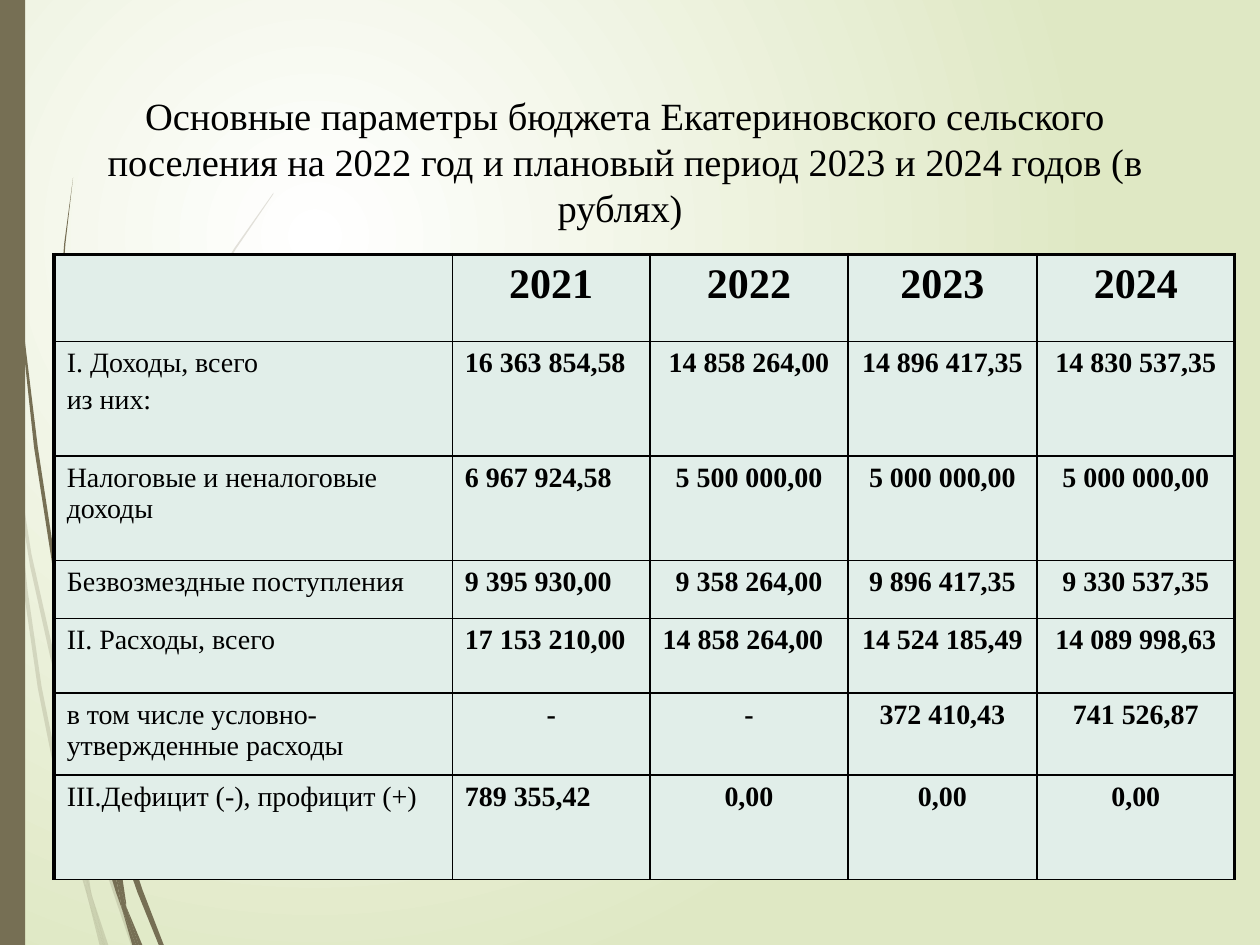
from lxml import etree
from pptx import Presentation
from pptx.dml.color import RGBColor
from pptx.enum.shapes import MSO_SHAPE
from pptx.enum.text import PP_ALIGN, MSO_ANCHOR
from pptx.oxml import parse_xml
from pptx.oxml.ns import qn, nsdecls
from pptx.util import Inches, Pt

FONT = "Times New Roman"
BLACK = RGBColor(0x00, 0x00, 0x00)
BROWN = RGBColor(0x76, 0x6F, 0x54)
CELL_FILL = RGBColor(0xE1, 0xEE, 0xE9)
GLOW, MEADOW = RGBColor(0xFF, 0xFF, 0xFF), RGBColor(0xDF, 0xE8, 0xC4)

TITLE = ("Основные параметры бюджета Екатериновского сельского поселения "
         "на 2022 год и плановый период 2023 и 2024 годов (в рублях) ")
BUDGET = [
    ("", "2021", "2022", "2023", "2024"),
    ("I. Доходы, всего\nиз них:",
     "16 363 854,58", "14 858 264,00", "14 896 417,35", "14 830 537,35"),
    ("Налоговые и неналоговые доходы",
     "6 967 924,58", "5 500 000,00", "5 000 000,00", "5 000 000,00"),
    ("Безвозмездные поступления",
     "9 395 930,00", "9 358 264,00", "9 896 417,35", "9 330 537,35"),
    ("II. Расходы, всего",
     "17 153 210,00", "14 858 264,00", "14 524 185,49", "14 089 998,63"),
    ("в том числе условно-утвержденные расходы",
     "-", "-", "372 410,43", "741 526,87"),
    ("III.Дефицит (-), профицит (+)", "789 355,42", "0,00", "0,00", "0,00"),
]
COLUMN_WIDTHS = [3.16, 1.57, 1.57, 1.5, 1.57]
ROW_HEIGHTS = [0.69, 0.91, 0.83, 0.46, 0.59, 0.65, 0.83]
LEFT_ALIGNED = {(1, 1), (2, 1), (3, 1), (4, 1), (4, 2), (6, 1)}

# Outlines of the grass blades, in inches
PALE_BLADES = [
    [(0.08, 3.5), (0.06, 3.22), (0, 2.82), (0, 2.99), (0.07, 3.44)],
    [(0.4, 5.22), (0.59, 5.99), (0.59, 5.86), (0.43, 5.2), (0.25, 4.4),
     (0.1, 3.45), (0.12, 3.76), (0.24, 4.5)],
    [(0.64, 6.07), (0.61, 5.96), (0.61, 6.1), (0.85, 6.94), (1.04, 7.5),
     (1.08, 7.5), (0.88, 6.92)],
    [(0.83, 7.5), (0.86, 7.5), (0.73, 7.11)],
    [(0.64, 6.83), (0.48, 6.19), (0.33, 5.45), (0.22, 4.69), (0.12, 3.76),
     (0.08, 3.5), (0.19, 4.7), (0.3, 5.46), (0.45, 6.21), (0.64, 6.93),
     (0.7, 7.14), (0.69, 7.07)],
    [(0.58, 5.99), (0.6, 6.46), (0.64, 6.83), (0.73, 7.11), (0.72, 7.06),
     (0.63, 6.46), (0.61, 6.1)],
    [(0.61, 5.84), (0.65, 5.22), (0.76, 4.62), (1.11, 3.49), (1.59, 2.45),
     (1.87, 1.98), (2.17, 1.54), (2.17, 1.53), (1.86, 1.97), (1.58, 2.44),
     (1.1, 3.48), (0.75, 4.61), (0.64, 5.22), (0.59, 5.84), (0.61, 5.96)],
    [(0.7, 7.14), (0.79, 7.5), (0.82, 7.5)],
    [(0.61, 6.08), (0.61, 5.96), (0.59, 5.86), (0.58, 5.99)],
    [(0.67, 6.92), (0.65, 6.83), (0.7, 7.14), (0.82, 7.5), (0.83, 7.5),
     (0.73, 7.11)],
]
DARK_BLADES = [
    [(0.05, 1.1), (0.14, 2.33), (0.27, 3.55), (0.46, 4.77), (0.47, 4.81),
     (0.45, 4.53), (0.3, 3.55), (0.15, 2.32), (0.06, 1.09), (0.04, 0.48),
     (0.03, 0), (0.02, 0), (0.03, 0.48)],
    [(0.73, 5.92), (0.88, 6.45), (0.88, 6.31), (0.77, 5.9), (0.62, 5.32),
     (0.5, 4.72), (0.53, 5.05)],
    [(0.94, 6.49), (0.91, 6.41), (0.91, 6.56), (1.09, 7.08), (1.26, 7.5),
     (1.3, 7.5), (1.13, 7.06)],
    [(0.91, 6.91), (0.81, 6.57), (0.69, 6.07), (0.6, 5.56), (0.53, 5.05),
     (0.47, 4.77), (0.56, 5.57), (0.65, 6.09), (0.77, 6.59), (0.92, 7.08),
     (0.97, 7.22)],
    [(0.5, 4.72), (0.48, 4.53), (0.44, 3.49), (0.48, 2.45), (0.52, 1.93),
     (0.58, 1.41), (0.51, 1.93), (0.47, 2.45), (0.43, 3.49), (0.45, 4.49),
     (0.49, 4.72)],
    [(1.1, 7.5), (1.13, 7.5), (1, 7.19)],
    [(0.47, 4.77), (0.53, 5.05), (0.5, 4.72), (0.45, 4.49), (0.45, 4.53)],
    [(0.91, 6.33), (1.03, 5.52), (1.31, 4.76), (1.69, 4.06), (1.91, 3.74),
     (2.16, 3.44), (2.15, 3.44), (1.91, 3.73), (1.68, 4.05), (1.29, 4.74),
     (1.01, 5.51), (0.88, 6.31), (0.91, 6.41)],
    [(0.97, 7.22), (1.05, 7.5), (1.08, 7.5)],
    [(0.88, 6.45), (0.91, 6.91), (1, 7.19), (1, 7.16), (0.91, 6.56)],
    [(0.88, 6.45), (0.91, 6.56), (0.91, 6.41), (0.88, 6.31)],
    [(0.96, 7.06), (0.91, 6.91), (0.97, 7.22), (1.08, 7.5), (1.1, 7.5),
     (1, 7.19)],
]


def set_background(slide):
    """Fill the slide with a round glow centred in its upper left quarter."""
    slide._element.cSld.insert(0, parse_xml(
        f'<p:bg {nsdecls("p", "a")}><p:bgPr><a:gradFill rotWithShape="1"><a:gsLst>'
        f'<a:gs pos="0"><a:srgbClr val="{GLOW}"/></a:gs>'
        f'<a:gs pos="100000"><a:srgbClr val="{MEADOW}"/></a:gs></a:gsLst>'
        '<a:path path="circle"><a:fillToRect l="50000" t="50000" r="100000" b="100000"/>'
        '</a:path></a:gradFill><a:effectLst/></p:bgPr></p:bg>'))


def paint(shape, opacity=100):
    shape.shadow.inherit = False
    shape.fill.solid()
    shape.fill.fore_color.rgb = BROWN
    shape.line.fill.background()
    if opacity < 100:
        color = shape._element.spPr.find(qn("a:solidFill"))[0]
        etree.SubElement(color, qn("a:alpha"), val=str(opacity * 1000))


def add_blades(shapes, blades, opacity):
    for blade in blades:
        # The builder keeps whole numbers only, so points go in as EMU
        start, *rest = [(Inches(x), Inches(y)) for x, y in blade]
        builder = shapes.build_freeform(*start)
        builder.add_line_segments(rest, close=True)
        paint(builder.convert_to_shape(), opacity)


def write(paragraph, text, size, bold=False, align=PP_ALIGN.LEFT):
    paragraph.alignment = align
    run = paragraph.add_run()
    run.text = text
    run.font.name, run.font.size, run.font.bold = FONT, Pt(size), bold
    run.font.color.rgb = BLACK


def set_borders(cell, widths):
    """Draw the borders; widths are points for left, right, top, bottom."""
    properties = cell._tc.get_or_add_tcPr()
    for position, (side, width) in enumerate(zip("LRTB", widths)):
        properties.insert(position, parse_xml(
            f'<a:ln{side} {nsdecls("a")} w="{Pt(width)}"><a:solidFill>'
            f'<a:srgbClr val="{BLACK}"/></a:solidFill></a:ln{side}>'))


def add_budget_table(shapes):
    last = len(COLUMN_WIDTHS) - 1
    table = shapes.add_table(
        len(BUDGET), len(COLUMN_WIDTHS), Inches(0.43), Inches(2.02),
        Inches(sum(COLUMN_WIDTHS)), Inches(sum(ROW_HEIGHTS))).table
    for column, width in zip(table.columns, COLUMN_WIDTHS):
        column.width = Inches(width)
    for r, (values, height) in enumerate(zip(BUDGET, ROW_HEIGHTS)):
        table.rows[r].height = Inches(height)
        for c, value in enumerate(values):
            cell = table.cell(r, c)
            cell.fill.solid()
            cell.fill.fore_color.rgb = CELL_FILL
            set_borders(cell, [2.25 if outer else 1
                               for outer in (c == 0, c == last, r == 0, False)])
            left = c == 0 or (r, c) in LEFT_ALIGNED
            align = PP_ALIGN.LEFT if left else PP_ALIGN.CENTER
            for i, line in enumerate(value.split("\n") if value else []):
                frame = cell.text_frame
                paragraph = frame.add_paragraph() if i else frame.paragraphs[0]
                if i:
                    paragraph.space_before = Pt(3)
                write(paragraph, line, 16 if r else 24, c > 0, align)


def main():
    deck = Presentation()
    deck.slide_width, deck.slide_height = Inches(10), Inches(7.5)
    slide = deck.slides.add_slide(deck.slide_layouts[6])
    set_background(slide)
    add_blades(slide.shapes, PALE_BLADES, 20)
    add_blades(slide.shapes, DARK_BLADES, 100)
    paint(slide.shapes.add_shape(
        MSO_SHAPE.RECTANGLE, 0, 0, Inches(0.2), Inches(7.5)))

    title = slide.shapes.add_textbox(
        Inches(0.59), Inches(0.68), Inches(8.74), Inches(1.02)).text_frame
    title.word_wrap = True
    title.vertical_anchor = MSO_ANCHOR.TOP
    write(title.paragraphs[0], TITLE, 22, align=PP_ALIGN.CENTER)

    add_budget_table(slide.shapes)
    deck.save("out.pptx")


if __name__ == "__main__":
    main()
